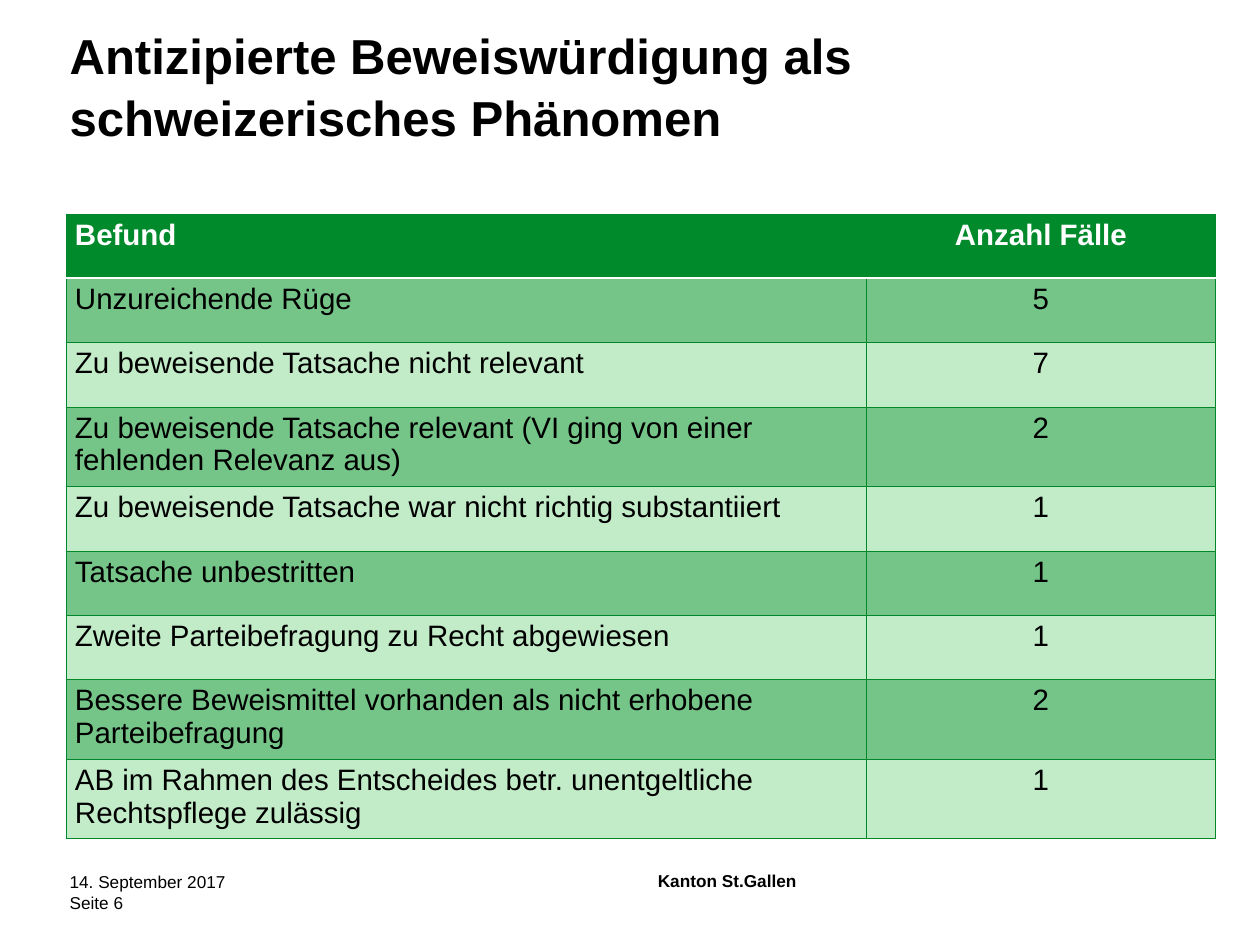
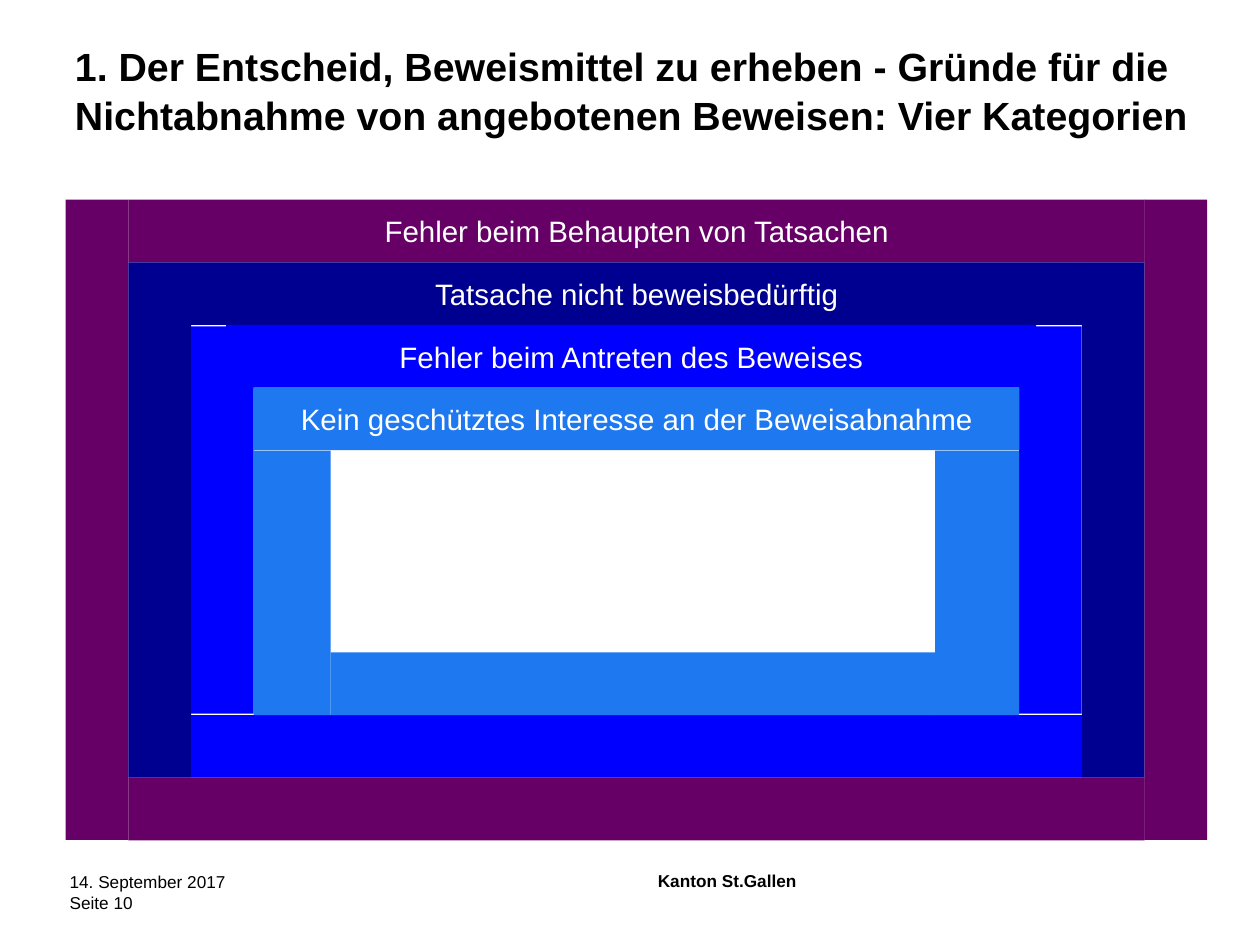
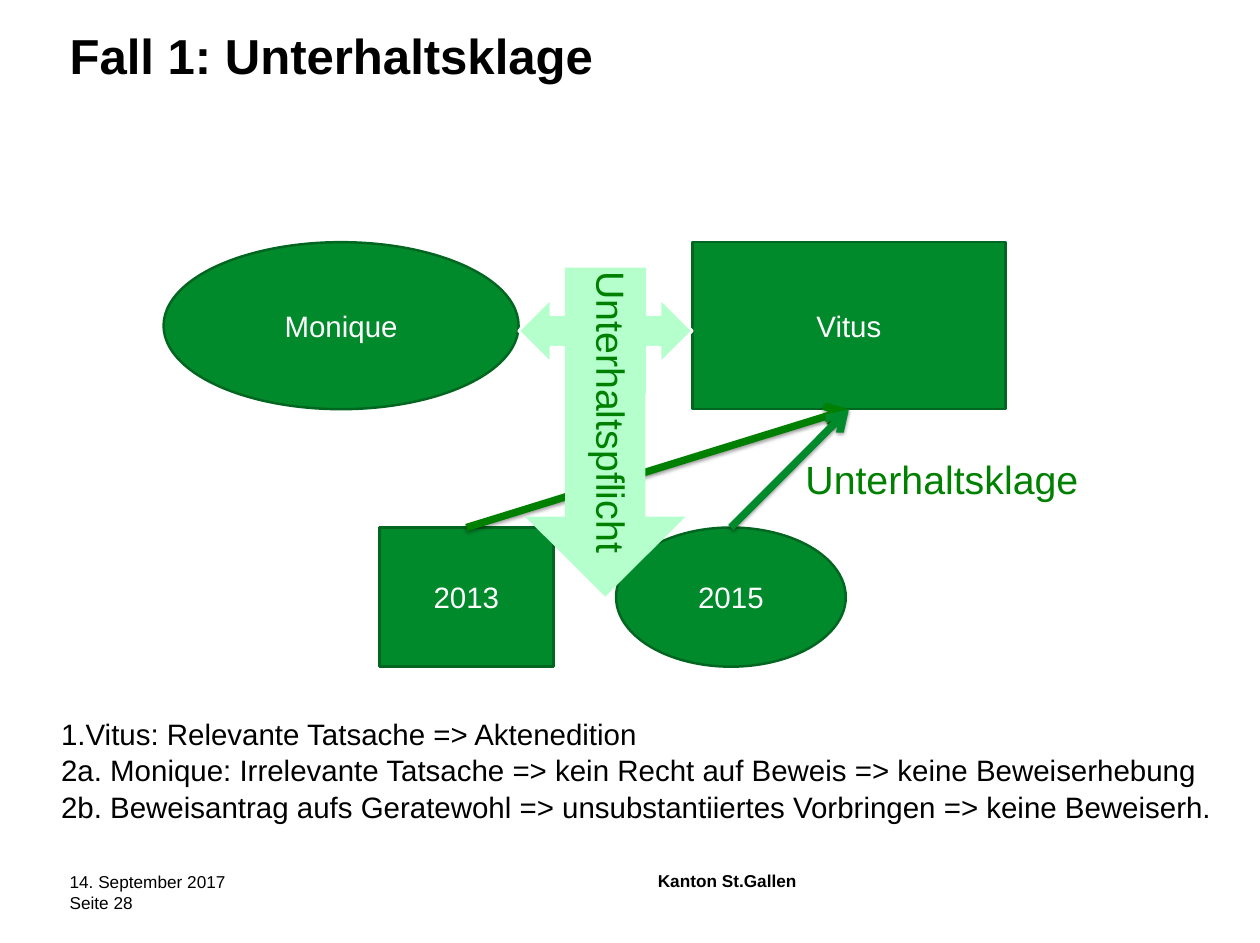
from dataclasses import dataclass
from typing import Any, Optional

import lxml.etree
import pptx
import pptx.dml.color
import pptx.enum.shapes
import pptx.enum.text
import pptx.oxml
import pptx.oxml.ns
import pptx.util

Cm = pptx.util.Cm
Pt = pptx.util.Pt
RGBColor = pptx.dml.color.RGBColor
SHAPE = pptx.enum.shapes.MSO_SHAPE
CONNECTOR = pptx.enum.shapes.MSO_CONNECTOR
ALIGN = pptx.enum.text.PP_ALIGN
ANCHOR = pptx.enum.text.MSO_ANCHOR
AUTO_SIZE = pptx.enum.text.MSO_AUTO_SIZE
qn = pptx.oxml.ns.qn

# Shared colours and formats
BLACK = RGBColor(0x00, 0x00, 0x00)
WHITE = RGBColor(0xFF, 0xFF, 0xFF)
GREEN = RGBColor(0x00, 0x8A, 0x2B)
GRID_GREEN = RGBColor(0x00, 0x87, 0x2A)
EDGE_GREEN = RGBColor(0x00, 0x66, 0x20)
TEXT_GREEN = RGBColor(0x00, 0x80, 0x00)
ARROW_GREEN = RGBColor(0xB5, 0xFF, 0xCC)
ROW_DARK = RGBColor(0x75, 0xC5, 0x89)
ROW_LIGHT = RGBColor(0xC2, 0xEB, 0xC8)
PURPLE = RGBColor(0x66, 0x00, 0x66)
NAVY = RGBColor(0x00, 0x00, 0x90)
BLUE = RGBColor(0x00, 0x00, 0xFF)
SKY = RGBColor(0x1E, 0x78, 0xF0)

FONT = "Arial"
NO_INSETS = dict.fromkeys(("margin_left", "margin_top", "margin_right", "margin_bottom"), 0)
LARGE_TITLE = {"size": Pt(40), "bold": True}
SMALL_TITLE = {"size": Pt(32), "bold": True}
BODY = {"size": Pt(24), "bold": False}
LABEL = {"size": Pt(32)}
FOOTER = {"size": Pt(14), "bold": False}
FOOTER_BOLD = {"size": Pt(14), "bold": True}


@dataclass
class Area:
    """A rectangle in centimetres."""
    left: float
    top: float
    width: float
    height: float

    def lengths(self) -> list[int]:
        return [Cm(self.left), Cm(self.top), Cm(self.width), Cm(self.height)]


@dataclass
class Span:
    """A stretch along one axis in centimetres."""
    start: float
    length: float


@dataclass
class Ring:
    """A frame made of a labelled head, two sides and perhaps a base."""
    text: str
    colour: RGBColor
    head: Span
    side: Span
    base: Optional[Span] = None
    base_top: float = 0
    left_side: float = 1.8
    right_side: float = 1.8


@dataclass
class Figure:
    """A labelled party or year of the case."""
    text: str
    kind: Any
    area: Area


TITLE_AREA = Area(2, 0.66, 33.2, 3.81)


def set_values(target: Any, values: dict[str, Any]) -> None:
    for name, value in values.items():
        setattr(target, name, value)


def write(frame: Any, lines: list[str], style: dict[str, Any], colour: RGBColor = BLACK,
          align: Any = ALIGN.LEFT, spacing: Any = None) -> None:
    """Fill a text frame with one paragraph per line."""
    frame.word_wrap = True
    for number, line in enumerate(lines):
        para = frame.paragraphs[0] if number == 0 else frame.add_paragraph()
        set_values(para, {"alignment": align, "space_before": Pt(0), "line_spacing": spacing})
        run = para.add_run()
        run.text = line
        set_values(run.font, {"name": FONT, **style})
        run.font.color.rgb = colour


def place(shape: Any, area: Area) -> None:
    set_values(shape, dict(zip(("left", "top", "width", "height"), area.lengths())))


def add_label(page: Any, area: Area, text: str, style: dict[str, Any],
              colour: RGBColor = BLACK, insets: Optional[dict[str, int]] = None,
              spacing: Any = None) -> Any:
    box = page.shapes.add_textbox(*area.lengths())
    set_values(box.text_frame, insets or {})
    write(box.text_frame, [text], style, colour, spacing=spacing)
    return box


def add_block(page: Any, kind: Any, area: Area, fill: RGBColor, text: str = "",
              edge: Optional[RGBColor] = None) -> Any:
    """Add a filled shape, with a centred label and an outline if wanted."""
    shape = page.shapes.add_shape(kind, *area.lengths())
    shape.shadow.inherit = False
    shape.fill.solid()
    shape.fill.fore_color.rgb = fill
    if edge is None:
        shape.line.fill.background()
    else:
        shape.line.color.rgb = edge
        shape.line.width = Pt(2)
    if text:
        shape.text_frame.vertical_anchor = ANCHOR.MIDDLE
        write(shape.text_frame, [text], BODY, WHITE, ALIGN.CENTER)
    return shape


def add_page(deck: Any, layout: int, title: str, number: int,
             style: dict[str, Any] = LARGE_TITLE, area: Area = TITLE_AREA,
             anchor: Any = ANCHOR.TOP, insets: dict[str, int] = NO_INSETS) -> Any:
    """Add a slide with its title and the shared footer."""
    page = deck.slides.add_slide(deck.slide_layouts[layout])
    heading = page.shapes.title
    place(heading, area)
    set_values(heading.text_frame, {"auto_size": AUTO_SIZE.NONE, "vertical_anchor": anchor, **insets})
    write(heading.text_frame, [title], style, spacing=1.05)
    add_label(page, Area(18.9, 25.02, 14.43, 0.61), "Kanton St.Gallen", FOOTER_BOLD, insets=NO_INSETS)
    add_label(page, Area(2, 25.04, 8.1, 0.51), "14. September 2017", FOOTER, insets=NO_INSETS,
              spacing=Pt(17))
    add_label(page, Area(2, 25.65, 8.1, 0.51), f"Seite {number}", FOOTER, insets=NO_INSETS)
    return page


# Slide with the table of findings
FINDINGS = [
    ("Befund", "Anzahl Fälle"),
    ("Unzureichende Rüge", "5"),
    ("Zu beweisende Tatsache nicht relevant", "7"),
    ("Zu beweisende Tatsache relevant (VI ging von einer fehlenden Relevanz aus)", "2"),
    ("Zu beweisende Tatsache war nicht richtig substantiiert", "1"),
    ("Tatsache unbestritten", "1"),
    ("Zweite Parteibefragung zu Recht abgewiesen", "1"),
    ("Bessere Beweismittel vorhanden als nicht erhobene Parteibefragung", "2"),
    ("AB im Rahmen des Entscheides betr. unentgeltliche Rechtspflege zulässig", "1"),
]


def set_border(cell: Any, side: str, colour: RGBColor, width: float) -> None:
    properties = cell._tc.get_or_add_tcPr()
    line = lxml.etree.SubElement(properties, qn(f"a:ln{side}"), w=str(Pt(width)))
    fill = lxml.etree.SubElement(line, qn("a:solidFill"))
    lxml.etree.SubElement(fill, qn("a:srgbClr"), val=str(colour))


def build_findings(deck: Any) -> None:
    page = add_page(deck, 5, "Antizipierte Beweiswürdigung als schweizerisches Phänomen", 6)
    area = Area(1.9, 6.15, 33.02, 16.65)
    table = page.shapes.add_table(len(FINDINGS), 2, *area.lengths()).table
    table.horz_banding = False
    for column, width in zip(table.columns, (22.99, 10.03)):
        column.width = Cm(width)
    for row, texts in enumerate(FINDINGS):
        is_header = row == 0
        fill = GREEN if is_header else ROW_DARK if row % 2 else ROW_LIGHT
        for column, text in enumerate(texts):
            cell = table.cell(row, column)
            for side in "LRTB":
                under_header = (row, side) in ((0, "B"), (1, "T"))
                set_border(cell, side, *((WHITE, 2) if under_header else (GRID_GREEN, 0.75)))
            cell.fill.solid()
            cell.fill.fore_color.rgb = fill
            write(cell.text_frame, [text], {**BODY, "bold": is_header},
                  WHITE if is_header else BLACK, ALIGN.CENTER if column else ALIGN.LEFT)


# Slide with the four nested categories
STEP = 1.8
RINGS_LEFT, RINGS_RIGHT, RINGS_TOP = 1.89, 34.68, 5.74
RINGS = [
    Ring("Fehler beim Behaupten von Tatsachen", PURPLE, Span(3.69, 29.2), Span(5.74, 18.4),
         Span(3.69, 29.2), 22.35),
    Ring("Tatsache nicht beweisbedürftig", NAVY, Span(5.49, 25.6), Span(7.54, 14.81)),
    Ring("Fehler beim Antreten des Beweises", BLUE, Span(6.5, 23.27), Span(9.38, 11.13),
         Span(5.49, 25.6), 20.55),
    Ring("Kein geschütztes Interesse an der Beweisabnahme", SKY, Span(7.29, 22), Span(12.95, 7.6),
         Span(9.5, 17.4), 18.75, left_side=2.21, right_side=2.41),
]


def build_categories(deck: Any) -> None:
    page = add_page(
        deck, 5, "1. Der Entscheid, Beweismittel zu erheben - Gründe für die "
        "Nichtabnahme von angebotenen Beweisen: Vier Kategorien", 10,
        SMALL_TITLE, Area(1.9, 0.76, 33.4, 3.6), ANCHOR.MIDDLE, {})
    for level, ring in enumerate(RINGS):
        inset = level * STEP
        side = ring.side
        bars = [
            Area(RINGS_LEFT + inset, side.start, ring.left_side, side.length),
            Area(RINGS_RIGHT - inset - ring.right_side, side.start, ring.right_side, side.length),
        ]
        if ring.base:
            bars.append(Area(ring.base.start, ring.base_top, ring.base.length, STEP))
        for bar in bars:
            add_block(page, SHAPE.RECTANGLE, bar, ring.colour)
        head = Area(ring.head.start, RINGS_TOP + inset, ring.head.length, STEP)
        add_block(page, SHAPE.RECTANGLE, head, ring.colour, ring.text)


# Slide with the maintenance case
FIGURES = [
    Figure("Vitus", SHAPE.RECTANGLE, Area(19.89, 6.96, 9, 4.8)),
    Figure("Monique", SHAPE.OVAL, Area(4.7, 6.96, 10.2, 4.8)),
    Figure("2013", SHAPE.RECTANGLE, Area(10.9, 15.16, 5, 4)),
    Figure("2015", SHAPE.OVAL, Area(17.7, 15.16, 6.6, 4)),
]
CONCLUSIONS = [
    "1.Vitus: Relevante Tatsache => Aktenedition",
    "2a. Monique: Irrelevante Tatsache => kein Recht auf Beweis => keine Beweiserhebung",
    "2b. Beweisantrag aufs Geratewohl => unsubstantiiertes Vorbringen => keine Beweiserh.",
]


def add_claim_arrow(page: Any, source: Any, target: Any, colour: RGBColor) -> None:
    """Join the top of one figure to the bottom of another by a shadowed arrow."""
    arrow = page.shapes.add_connector(CONNECTOR.STRAIGHT, 0, 0, 0, 0)
    arrow.begin_connect(source, 0)
    arrow.end_connect(target, 2)
    arrow.line.color.rgb = colour
    arrow.line.width = Pt(6)
    lxml.etree.SubElement(arrow.line._get_or_add_ln(), qn("a:tailEnd"), type="arrow")
    effects = lxml.etree.SubElement(arrow.element.spPr, qn("a:effectLst"))
    shadow = lxml.etree.SubElement(effects, qn("a:outerShdw"), blurRad=str(Pt(3.1)),
                                   dist=str(Pt(1.6)), dir="5400000", rotWithShape="0")
    tone = lxml.etree.SubElement(shadow, qn("a:srgbClr"), val=str(BLACK))
    lxml.etree.SubElement(tone, qn("a:alpha"), val="38000")


def build_case(deck: Any) -> None:
    page = add_page(deck, 1, "Fall 1: Unterhaltsklage", 28)

    # Parties, years and claims
    figures = {figure.text: add_block(page, figure.kind, figure.area, GREEN, figure.text, EDGE_GREEN)
               for figure in FIGURES}
    for year, colour in (("2013", TEXT_GREEN), ("2015", GREEN)):
        add_claim_arrow(page, figures[year], figures["Vitus"], colour)
    add_label(page, Area(22.89, 12.95, 9.8, 1.63), "Unterhaltsklage", LABEL, TEXT_GREEN)

    # Duty of maintenance
    callout = add_block(page, SHAPE.UP_DOWN_ARROW_CALLOUT, Area(15.54, 7.01, 3.71, 5),
                        ARROW_GREEN, edge=WHITE)
    callout.rotation = 90
    add_block(page, SHAPE.DOWN_ARROW, Area(15.09, 11.15, 4.6, 6), ARROW_GREEN)
    duty = add_label(page, Area(16.51, 7.54, 1.88, 9), "Unterhaltspflicht", LABEL, TEXT_GREEN)
    duty.element.txBody.bodyPr.set("vert", "vert")

    # Conclusions
    body = page.placeholders[1]
    place(body, Area(1.5, 20.42, 33.6, 3.33))
    set_values(body.text_frame, {"auto_size": AUTO_SIZE.NONE, "vertical_anchor": ANCHOR.TOP})
    write(body.text_frame, CONCLUSIONS, BODY, spacing=1.03)
    for para in body.text_frame.paragraphs:
        properties = para._p.get_or_add_pPr()
        set_values(properties, {})
        properties.set("marL", "0")
        properties.set("indent", "0")
        lxml.etree.SubElement(properties, qn("a:buNone"))


def main() -> None:
    deck = pptx.Presentation()
    deck.slide_width, deck.slide_height = Cm(36.2), Cm(27.1)
    build_findings(deck)
    build_categories(deck)
    build_case(deck)
    deck.save("out.pptx")


if __name__ == "__main__":
    main()
